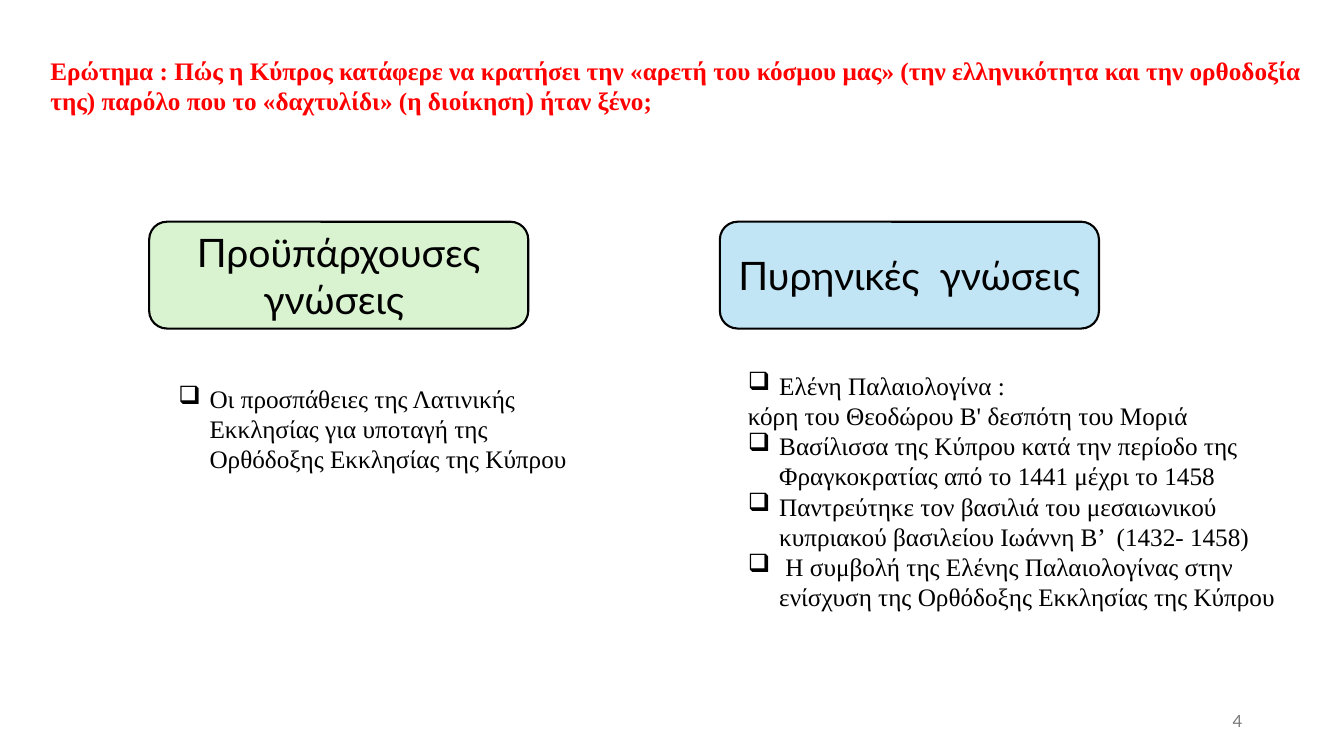
"""Builds the slide on prior and core knowledge about medieval Cyprus."""
from dataclasses import dataclass

from lxml.etree import SubElement
from pptx import Presentation
from pptx.dml.color import RGBColor
from pptx.enum.shapes import MSO_SHAPE as Shape
from pptx.enum.text import MSO_ANCHOR as Anchor, PP_ALIGN as Align
from pptx.oxml.ns import qn
from pptx.slide import Slide
from pptx.text.text import TextFrame
from pptx.util import Inches, Pt

COLORS = {"question": "FF0000", "text": "000000", "number": "797979",
          "prior": "D9F2D0", "core": "C1E5F5"}
SERIF, SANS = "Times New Roman", "Lato"
HANG = Inches(0.31)


@dataclass
class Item:
    text: str
    bulleted: bool = True


@dataclass
class Topic:
    heading: str
    fill: str
    left: float
    bounds: tuple[float, float, float, float]
    items: list[Item]


TOPICS = [
    Topic("Προϋπάρχουσες γνώσεις ", "prior", 1.48, (1.67, 3.75, 4.15, 1.01), [
        Item("Οι προσπάθειες της Λατινικής Εκκλησίας για υποταγή της "
             "Ορθόδοξης Εκκλησίας της Κύπρου"),
    ]),
    Topic("Πυρηνικές  γνώσεις ", "core", 7.14, (7.32, 3.62, 5.55, 2.52), [
        Item("Ελένη Παλαιολογίνα :"),
        Item("κόρη του Θεοδώρου Β' δεσπότη του Μοριά", bulleted=False),
        Item("Βασίλισσα της Κύπρου κατά την περίοδο "
             "της Φραγκοκρατίας από το 1441 μέχρι το 1458 "),
        Item("Παντρεύτηκε τον βασιλιά του μεσαιωνικού κυπριακού βασιλείου "
             "Ιωάννη Β’  (1432- 1458) "),
        Item(" Η συμβολή της Ελένης Παλαιολογίνας στην ενίσχυση "
             "της Ορθόδοξης Εκκλησίας της Κύπρου"),
    ]),
]


def style(frame: TextFrame, face: str, size: int, color: str,
          align: Align = Align.LEFT, anchor: Anchor = Anchor.TOP,
          bold: bool = False) -> None:
    frame.word_wrap = True
    frame.vertical_anchor = anchor
    for para in frame.paragraphs:
        para.alignment = align
        for span in para.runs:
            span.font.name = face
            span.font.size = Pt(size)
            span.font.bold = bold
            span.font.color.rgb = RGBColor.from_string(COLORS[color])


def add_question(page: Slide, text: str) -> None:
    title = page.shapes.title
    title.left, title.top = Inches(0.4), Inches(0.5)
    title.width, title.height = Inches(12.81), Inches(0.71)
    title.text_frame.text = text
    style(title.text_frame, SERIF, 18, "question", bold=True)


def add_heading(page: Slide, topic: Topic) -> None:
    box = page.shapes.add_shape(Shape.ROUNDED_RECTANGLE, Inches(topic.left),
                                Inches(2.2), Inches(3.76), Inches(1.06))
    box.shadow.inherit = False
    box.fill.solid()
    box.fill.fore_color.rgb = RGBColor.from_string(COLORS[topic.fill])
    box.line.color.rgb = RGBColor.from_string(COLORS["text"])
    box.line.width = Pt(1.5)
    box.text_frame.text = topic.heading
    style(box.text_frame, SANS, 28, "text", Align.CENTER, Anchor.MIDDLE)


def add_items(page: Slide, topic: Topic) -> None:
    box = page.shapes.add_textbox(*map(Inches, topic.bounds))
    frame = box.text_frame
    frame.text = "\n".join(item.text for item in topic.items)
    for para, item in zip(frame.paragraphs, topic.items):
        if item.bulleted:
            properties = para._p.get_or_add_pPr()
            properties.set("marL", str(HANG))
            properties.set("indent", str(-HANG))
            SubElement(properties, qn("a:buChar"), char="❑")
    style(frame, SERIF, 18, "text")


def add_page_number(page: Slide, number: int) -> None:
    box = page.shapes.add_textbox(Inches(9.42), Inches(6.95), Inches(3), Inches(0.4))
    box.text_frame.text = str(number)
    style(box.text_frame, SANS, 12, "number", Align.RIGHT, Anchor.MIDDLE)


def main() -> None:
    deck = Presentation()
    deck.slide_width, deck.slide_height = Inches(13.33), Inches(7.5)
    page = deck.slides.add_slide(deck.slide_layouts.get_by_name("Title Only"))
    add_question(page, "Ερώτημα : Πώς η Κύπρος κατάφερε να κρατήσει την «αρετή του "
                       "κόσμου μας» (την ελληνικότητα και την ορθοδοξία της) παρόλο "
                       "που το «δαχτυλίδι» (η διοίκηση) ήταν ξένο;")
    for topic in TOPICS:
        add_heading(page, topic)
        add_items(page, topic)
    add_page_number(page, 4)
    deck.save("out.pptx")


if __name__ == "__main__":
    main()
